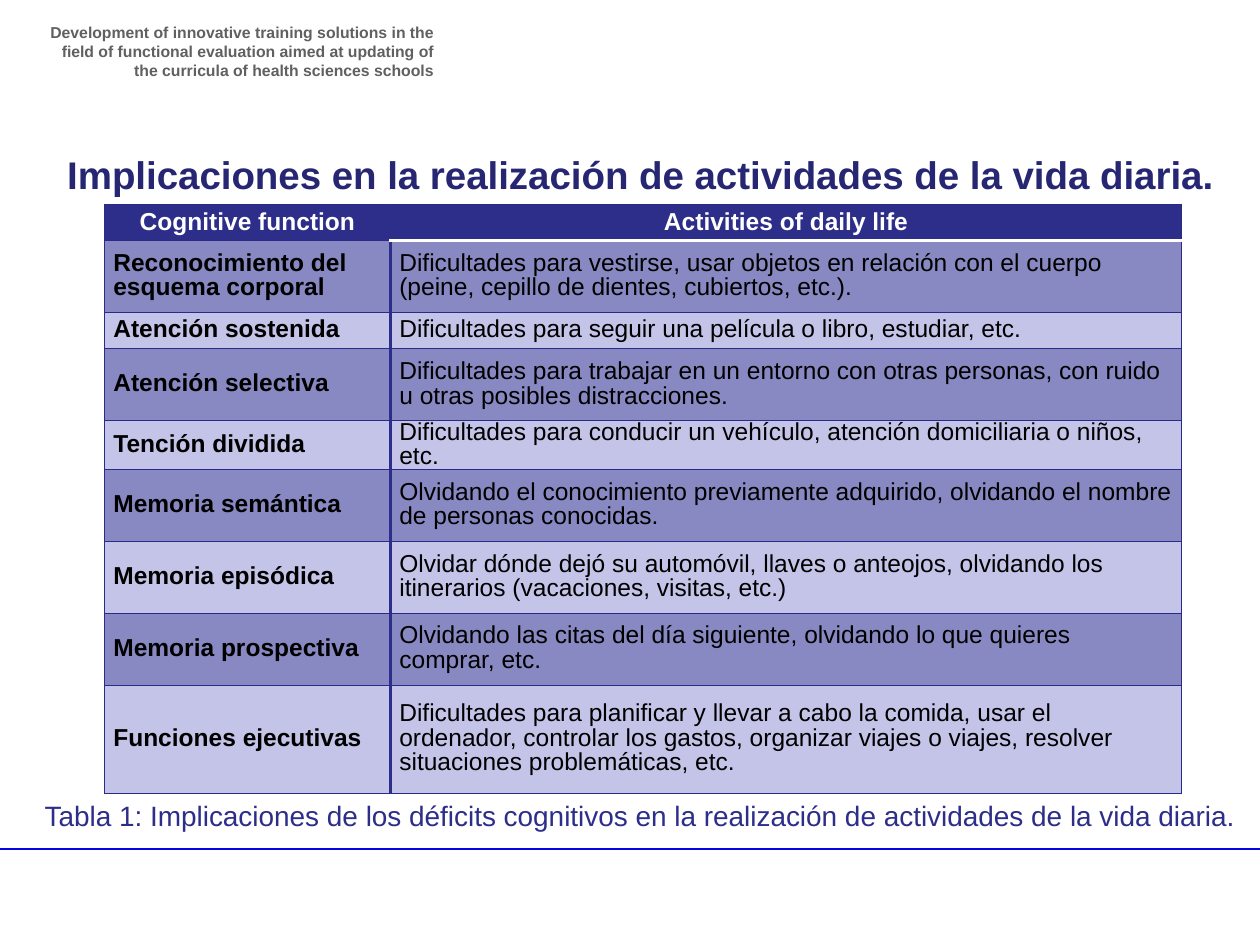
from typing import NamedTuple

from lxml.etree import SubElement
from pptx import Presentation
from pptx.dml.color import RGBColor
from pptx.enum.shapes import MSO_CONNECTOR
from pptx.enum.text import MSO_ANCHOR, MSO_AUTO_SIZE, PP_ALIGN
from pptx.oxml.ns import qn
from pptx.util import Inches, Pt

FONT = "Arial"
COLORS = {
    "navy": "2D2D8A", "title": "262673", "border": "2A2A89", "rule": "0404E6",
    "dark_band": "8888C2", "light_band": "C4C4E8",
    "grey": "606060", "white": "FFFFFF", "black": "000000",
}


class Row(NamedTuple):
    function: str
    activities: str
    height: float


class TextStyle(NamedTuple):
    size: float
    color: str
    bold: bool = False
    align: PP_ALIGN = PP_ALIGN.LEFT


class Edge(NamedTuple):
    color: str
    width: float


HEADER = Row("Cognitive function", "Activities of daily life", 0.29)
ROWS = [
    Row("Reconocimiento del esquema corporal",
        "Dificultades para vestirse, usar objetos en relación con el cuerpo "
        "(peine, cepillo de dientes, cubiertos, etc.).", 0.57),
    Row("Atención sostenida",
        "Dificultades para seguir una película o libro, estudiar, etc.", 0.29),
    Row("Atención selectiva",
        "Dificultades para trabajar en un entorno con otras personas, con ruido "
        "u otras posibles distracciones.", 0.57),
    Row("Tención dividida",
        "Dificultades para conducir un vehículo, atención domiciliaria o niños, "
        "etc.", 0.29),
    Row("Memoria semántica",
        "Olvidando el conocimiento previamente adquirido, olvidando el nombre "
        "de personas conocidas.", 0.57),
    Row("Memoria episódica",
        "Olvidar dónde dejó su automóvil, llaves o anteojos, olvidando los "
        "itinerarios (vacaciones, visitas, etc.)", 0.57),
    Row("Memoria prospectiva",
        "Olvidando las citas del día siguiente, olvidando lo que quieres "
        "comprar, etc.", 0.57),
    Row("Funciones ejecutivas",
        "Dificultades para planificar y llevar a cabo la comida, usar el "
        "ordenador, controlar los gastos, organizar viajes o viajes, resolver "
        "situaciones problemáticas, etc.", 0.86),
]
COLUMN_WIDTHS = (2.27, 6.28)
THIN = Edge("border", 0.75)
THICK = Edge("navy", 2)
HEADER_RULE = Edge("white", 2)


def rgb(name: str) -> RGBColor:
    return RGBColor.from_string(COLORS[name])


def write(tf, text: str, style: TextStyle):
    p = tf.paragraphs[0]
    p.text = text
    p.alignment = style.align
    p.font.name = FONT
    p.font.size = Pt(style.size)
    p.font.bold = style.bold
    p.font.color.rgb = rgb(style.color)
    return p


def add_text(s, box: tuple, text: str, style: TextStyle) -> None:
    tb = s.shapes.add_textbox(*map(Inches, box))
    tb.text_frame.word_wrap = True
    write(tb.text_frame, text, style)


def set_borders(cell, edges: dict) -> None:
    tc_pr = cell._tc.get_or_add_tcPr()
    for side in "LRTB":
        edge = edges[side]
        ln = SubElement(tc_pr, qn(f"a:ln{side}"), w=str(Pt(edge.width)))
        fill = SubElement(ln, qn("a:solidFill"))
        SubElement(fill, qn("a:srgbClr"), val=COLORS[edge.color])


def fill_cell(cell, text: str, style: TextStyle, fill: str, edges: dict):
    cell.vertical_anchor = MSO_ANCHOR.MIDDLE
    cell.margin_left = cell.margin_right = Inches(0.07)
    cell.margin_top = cell.margin_bottom = 0
    set_borders(cell, edges)
    cell.fill.solid()
    cell.fill.fore_color.rgb = rgb(fill)
    return write(cell.text_frame, text, style)


def add_function_table(s, left: float, top: float) -> None:
    rows = [HEADER, *ROWS]
    table = s.shapes.add_table(
        len(rows), 2, Inches(left), Inches(top), Inches(sum(COLUMN_WIDTHS)),
        Inches(sum(row.height for row in rows))).table
    for column, width in zip(table.columns, COLUMN_WIDTHS):
        column.width = Inches(width)
    for i, row in enumerate(rows):
        table.rows[i].height = Inches(row.height)
        for j, text in enumerate((row.function, row.activities)):
            edges = dict.fromkeys("LRTB", THIN)
            edges["R" if j == 0 else "L"] = THICK
            if j == 1 and i < 2:
                edges["B" if i == 0 else "T"] = HEADER_RULE
            if i == 0:
                style = TextStyle(14, "white", True, PP_ALIGN.CENTER)
                fill_cell(table.cell(i, j), text, style, "navy", edges)
            else:
                band = "dark_band" if i % 2 else "light_band"
                style = TextStyle(14, "black", j == 0)
                p = fill_cell(table.cell(i, j), text, style, band, edges)
                p.line_spacing = Pt(14)


def main() -> None:
    prs = Presentation()
    prs.slide_width, prs.slide_height = Inches(10), Inches(7.5)
    s = prs.slides.add_slide(prs.slide_layouts[5])

    # Footer rule
    rule = s.shapes.add_connector(MSO_CONNECTOR.STRAIGHT, Inches(-0.05),
                                  Inches(6.74), Inches(10), Inches(6.74))
    rule.line.color.rgb = rgb("rule")
    rule.line.width = Pt(1)
    SubElement(rule._element.spPr, qn("a:effectLst"))

    # Project name
    add_text(s, (0.28, 0.13, 3.26, 0.47),
             "Development of innovative training solutions in the ﬁeld of "
             "functional evaluation aimed at updating of the curricula of "
             "health sciences schools",
             TextStyle(9, "grey", True, PP_ALIGN.RIGHT))

    # Title
    title = s.shapes.title
    title.left, title.top = Inches(0.28), Inches(1.15)
    title.width, title.height = Inches(9.61), Inches(0.47)
    tf = title.text_frame
    tf.auto_size = MSO_AUTO_SIZE.NONE
    tf.vertical_anchor = MSO_ANCHOR.TOP
    write(tf, "Implicaciones en la realización de actividades de la vida diaria.",
          TextStyle(22, "title", True, PP_ALIGN.CENTER))

    # Table and its caption
    add_function_table(s, 0.83, 1.62)
    add_text(s, (0.14, 6.29, 9.88, 0.37),
             "Tabla 1: Implicaciones de los déficits cognitivos en la "
             "realización de actividades de la vida diaria.",
             TextStyle(16, "navy", align=PP_ALIGN.CENTER))

    prs.save("out.pptx")


if __name__ == "__main__":
    main()
